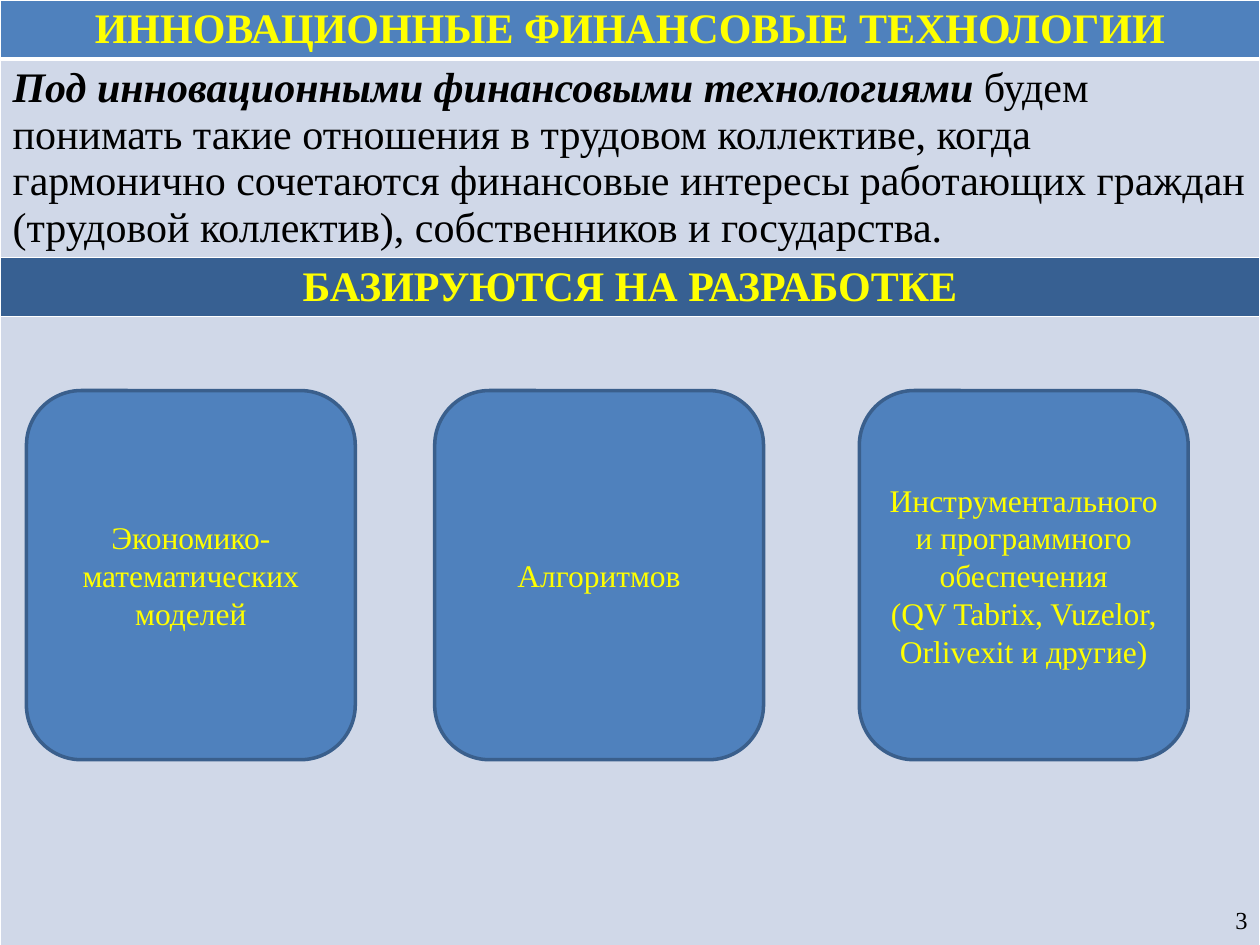
import pptx
import pptx.util
import pptx.dml.color
import pptx.enum.shapes
import pptx.enum.text
import pptx.oxml.ns
from lxml import etree

Inches, Pt = pptx.util.Inches, pptx.util.Pt
RGBColor = pptx.dml.color.RGBColor
ALIGN = pptx.enum.text.PP_ALIGN
MIDDLE = pptx.enum.text.MSO_ANCHOR.MIDDLE

FONT = "Times New Roman"
BLUE = RGBColor(0x4F, 0x81, 0xBD)
DARK_BLUE = RGBColor(0x37, 0x60, 0x92)
OUTLINE = RGBColor(0x3A, 0x5F, 0x8C)
PALE = RGBColor(0xD0, 0xD8, 0xE8)
YELLOW = RGBColor(0xFF, 0xFF, 0x00)
BLACK = RGBColor(0, 0, 0)
WHITE = RGBColor(0xFF, 0xFF, 0xFF)

# Content: row height, fill, text colour, alignment, runs (text, bold, italic)
ROWS = [
    (0.44, BLUE, YELLOW, ALIGN.CENTER,
     [("ИННОВАЦИОННЫЕ ФИНАНСОВЫЕ ТЕХНОЛОГИИ", True, False)]),
    (1.08, PALE, BLACK, ALIGN.LEFT,
     [("Под инновационными финансовыми технологиями ", True, True),
      ("будем понимать такие отношения в трудовом коллективе, когда "
       "гармонично сочетаются финансовые интересы работающих граждан "
       "(трудовой коллектив), собственников и государства.", False, False)]),
    (0.4, DARK_BLUE, YELLOW, ALIGN.CENTER,
     [("БАЗИРУЮТСЯ НА РАЗРАБОТКЕ", True, False)]),
    (7.06, PALE, BLACK, ALIGN.LEFT, []),
]
# Left edge and lines of each box
BOXES = [
    (0.21, ["Экономико-математических моделей"]),
    (3.45, ["Алгоритмов"]),
    (6.82, ["Инструментального и программного обеспечения",
            "(QV Tabrix, Vuzelor, Orlivexit и другие)"]),
]
BOX_TOP, BOX_W, BOX_H = 3.1, 2.61, 2.93
PAGE_NUMBER = "3"


def add_run(p, text, size, color, bold=False, italic=False):
    r = p.add_run()
    r.text = text
    r.font.name, r.font.size = FONT, Pt(size)
    r.font.bold, r.font.italic = bold, italic
    r.font.color.rgb = color


def set_borders(cell, bottom):
    """White borders, 1 pt except for the bottom one."""
    tc_pr = cell._tc.get_or_add_tcPr()
    widths = {"lnL": 1, "lnR": 1, "lnT": 1, "lnB": bottom}
    for i, (tag, width) in enumerate(widths.items()):
        ln = etree.Element(pptx.oxml.ns.qn("a:" + tag), w=str(Pt(width)))
        fill = etree.SubElement(ln, pptx.oxml.ns.qn("a:solidFill"))
        etree.SubElement(fill, pptx.oxml.ns.qn("a:srgbClr"), val=str(WHITE))
        tc_pr.insert(i, ln)


prs = pptx.Presentation()
prs.slide_width, prs.slide_height = Inches(10), Inches(7.5)
s = prs.slides.add_slide(prs.slide_layouts[6])

# Table
total = sum(row[0] for row in ROWS)
table = s.shapes.add_table(len(ROWS), 1, 0, 0, prs.slide_width, Inches(total)).table
for i, (height, fill, color, align, runs) in enumerate(ROWS):
    table.rows[i].height = Inches(height)
    cell = table.cell(i, 0)
    cell.fill.solid()
    cell.fill.fore_color.rgb = fill
    set_borders(cell, bottom=3 if i == 0 else 1)
    p = cell.text_frame.paragraphs[0]
    p.alignment = align
    for text, bold, italic in runs:
        add_run(p, text, 24, color, bold, italic)

# Page number
tf = s.shapes.add_textbox(Inches(9.64), Inches(7.1), Inches(0.36), Inches(0.4)).text_frame
tf.word_wrap = True
tf.vertical_anchor = MIDDLE
p = tf.paragraphs[0]
p.alignment = ALIGN.RIGHT
add_run(p, PAGE_NUMBER, 14, BLACK)

# Boxes
for left, lines in BOXES:
    sp = s.shapes.add_shape(pptx.enum.shapes.MSO_SHAPE.ROUNDED_RECTANGLE,
                            Inches(left), Inches(BOX_TOP), Inches(BOX_W), Inches(BOX_H))
    sp.shadow.inherit = False
    sp.fill.solid()
    sp.fill.fore_color.rgb = BLUE
    sp.line.color.rgb = OUTLINE
    sp.line.width = Pt(2)
    tf = sp.text_frame
    tf.word_wrap = True
    tf.vertical_anchor = MIDDLE
    p = tf.paragraphs[0]
    p.alignment = ALIGN.CENTER
    for i, line in enumerate(lines):
        if i:
            p.add_line_break()
        add_run(p, line, 18, YELLOW)

prs.save("out.pptx")
